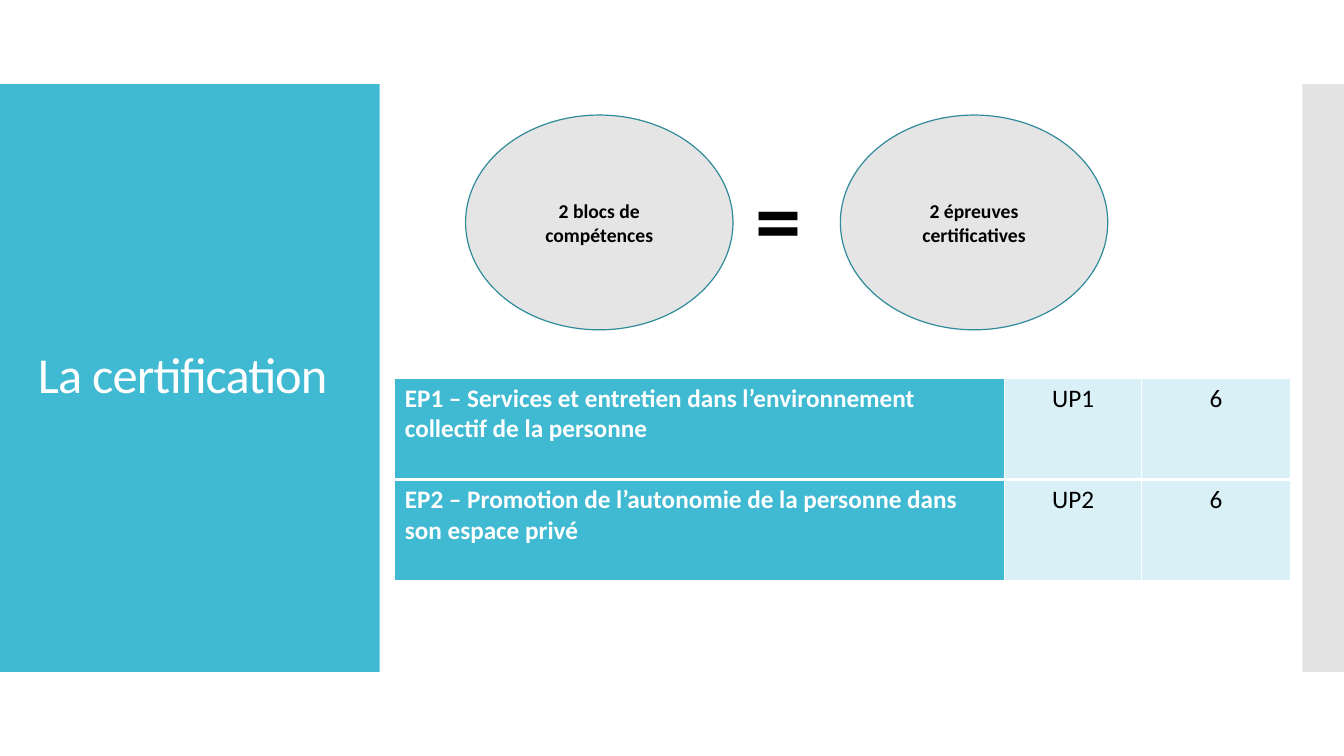
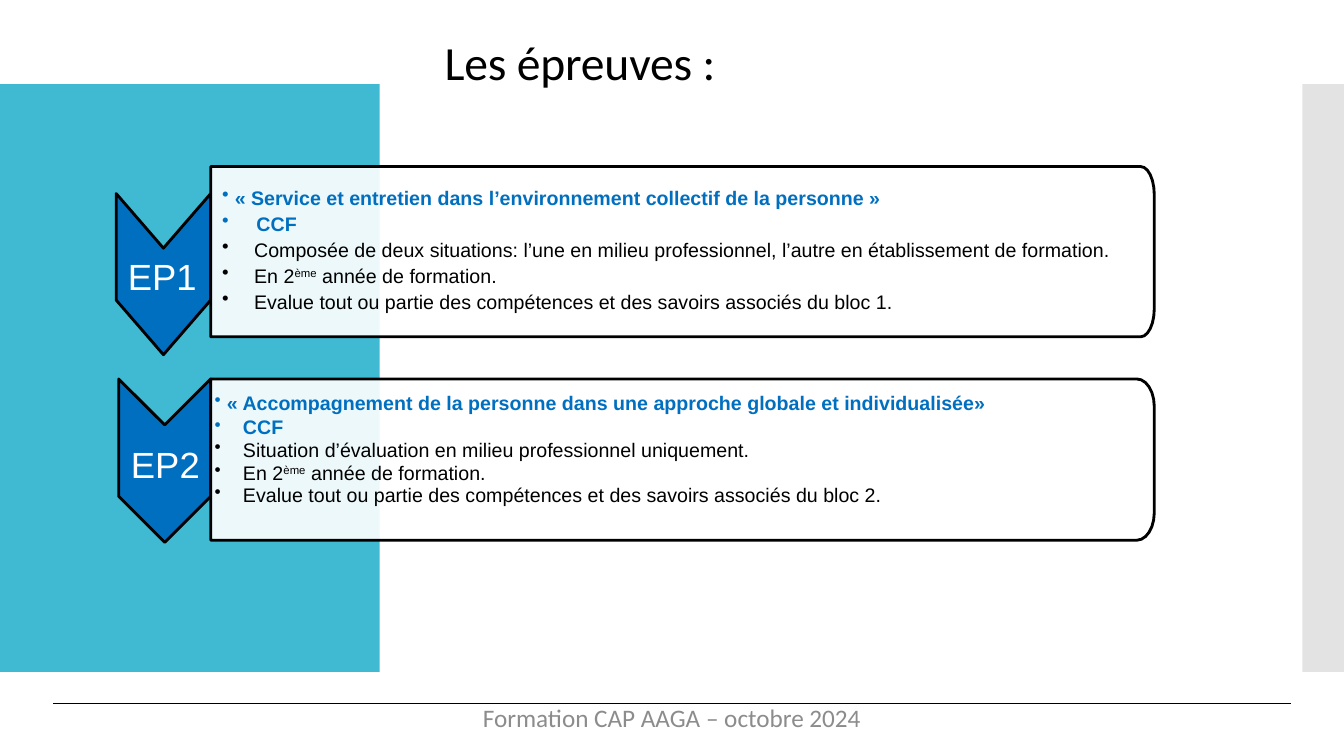
import math

from lxml import etree
from pptx import Presentation
from pptx import util as u
from pptx.dml.color import RGBColor
from pptx.enum import shapes, text
from pptx.oxml.ns import qn

Pt = u.Pt
PAGE_WIDTH, PAGE_HEIGHT = 960, 540
TEAL, PALE_TEAL, DARK_TEAL = "40BAD2", "D9F1F6", "2F8A9B"
BLUE, GREY, SIDE_GREY, FOOTER_GREY = "006FC0", "E5E5E5", "C8C8C8", "8C8C8C"
WHITE, BLACK = "FFFFFF", "000000"
HEADING_FONT, BODY_FONT = "Calibri", "Arial"
BAND_TOP, BAND_HEIGHT = 60, 420
PANEL_LEFT, PANEL_WIDTH = 150.5, 674
LEFT, CENTER = text.PP_ALIGN.LEFT, text.PP_ALIGN.CENTER
TOP, MIDDLE = text.MSO_ANCHOR.TOP, text.MSO_ANCHOR.MIDDLE


def color(value):
    return RGBColor.from_string(value)


# Text
def add_span(para, words, size, ink, font=HEADING_FONT, bold=False,
             spacing=0, raised=False):
    span = para.add_run()
    span.text = words
    span.font.size = Pt(size)
    span.font.name = font
    span.font.bold = bold
    span.font.color.rgb = color(ink)
    properties = span.font._element
    if spacing:
        properties.set("spc", str(round(spacing * 100)))
    if raised:
        properties.set("baseline", "30000")


def add_box(page, left, top, width, height, anchor=TOP, inset=0):
    box = page.shapes.add_textbox(Pt(left), Pt(top), Pt(width), Pt(height))
    frame = box.text_frame
    frame.word_wrap = True
    frame.vertical_anchor = anchor
    frame.margin_left = frame.margin_right = Pt(inset)
    frame.margin_top = frame.margin_bottom = Pt(inset / 2)
    return frame


def add_label(page, place, words, size, ink, align=LEFT, anchor=TOP, inset=0,
              line_spacing=None, **style):
    para = add_box(page, *place, anchor=anchor, inset=inset).paragraphs[0]
    para.alignment = align
    para.line_spacing = line_spacing
    add_span(para, words, size, ink, **style)


def set_bullet(para, indent, hanging, bullet_size):
    properties = para._p.get_or_add_pPr()
    properties.set("marL", str(Pt(indent)))
    properties.set("indent", str(-Pt(hanging)))
    etree.SubElement(properties, qn("a:buSzPct")).set("val", str(bullet_size * 1000))
    etree.SubElement(properties, qn("a:buChar")).set("char", "•")


def add_bullets(page, place, items, bullet_left, bullet_size):
    """Each item: indent, space before, line spacing, ink, bold, spans."""
    frame = add_box(page, *place)
    for index, (indent, before, spacing, ink, bold, spans) in enumerate(items):
        para = frame.add_paragraph() if index else frame.paragraphs[0]
        para.space_before = Pt(before)
        para.line_spacing = Pt(spacing) if spacing else None
        set_bullet(para, indent, indent - bullet_left, bullet_size)
        for words in spans:
            add_span(para, words, 14, ink, BODY_FONT, bold, raised=words == "ème")


# Shapes
def style_shape(shape, fill, line=None, weight=1, opacity=100):
    shape.shadow.inherit = False
    shape.fill.solid()
    shape.fill.fore_color.rgb = color(fill)
    if opacity < 100:
        tint = shape._element.spPr.find(qn("a:solidFill")).find(qn("a:srgbClr"))
        etree.SubElement(tint, qn("a:alpha")).set("val", str(opacity * 1000))
    if line:
        shape.line.color.rgb = color(line)
        shape.line.width = Pt(weight)
    else:
        shape.line.fill.background()


def add_preset(page, kind, left, top, width, height, fill, **style):
    shape = page.shapes.add_shape(kind, Pt(left), Pt(top), Pt(width), Pt(height))
    style_shape(shape, fill, **style)
    return shape


def add_outline(page, points, fill, opacity=100):
    points = [(Pt(x), Pt(y)) for x, y in points]
    builder = page.shapes.build_freeform(*points[0])
    builder.add_line_segments(points[1:], close=True)
    style_shape(builder.convert_to_shape(), fill, BLACK, 2.04, opacity)


def add_chevron(page, left, top, right, bottom, depth):
    middle = (left + right) / 2
    add_outline(page, [(left, top), (middle, top + depth), (right, top),
                       (right, bottom - depth), (middle, bottom),
                       (left, bottom - depth)], BLUE)


def add_panel(page, top, height, corner_width, corner_height):
    """White panel with elliptical corners on its right side."""
    right, bottom = PANEL_LEFT + PANEL_WIDTH, top + height
    angles = [math.radians(15 * step) for step in range(7)]
    arc = [(right - corner_width * (1 - math.sin(angle)),
            corner_height * (1 - math.cos(angle))) for angle in angles]
    upper = [(x, top + drop) for x, drop in arc]
    lower = [(x, bottom - drop) for x, drop in reversed(arc)]
    add_outline(page, [(PANEL_LEFT, top), *upper, *lower, (PANEL_LEFT, bottom)],
                WHITE, opacity=90)


def add_rule(page, start, end, y):
    rule = page.shapes.add_connector(shapes.MSO_CONNECTOR.STRAIGHT,
                                     Pt(start), Pt(y), Pt(end), Pt(y))
    rule.line.color.rgb = color(BLACK)
    rule.line.width = Pt(0.84)
    etree.SubElement(rule._element.spPr, qn("a:effectLst"))


# Table
def set_borders(cell, **weights):
    properties = cell._tc.get_or_add_tcPr()
    for side in "LRTB":
        border = etree.SubElement(properties, qn("a:ln" + side))
        border.set("w", str(Pt(weights.get(side, 1))))
        fill = etree.SubElement(border, qn("a:solidFill"))
        etree.SubElement(fill, qn("a:srgbClr")).set("val", WHITE)


def add_exam_table(page, left, top, widths, row_height, rows):
    frame = page.shapes.add_table(len(rows), len(widths), Pt(left), Pt(top),
                                  Pt(sum(widths)), Pt(row_height * len(rows)))
    table = frame.table
    table.first_row = table.horz_banding = False
    for column, width in zip(table.columns, widths):
        column.width = Pt(width)
    for row, values in enumerate(rows):
        for column, words in enumerate(values):
            cell, heading = table.cell(row, column), column == 0
            set_borders(cell, **({"T": 3} if row else {"B": 3}))
            cell.fill.solid()
            cell.fill.fore_color.rgb = color(TEAL if heading else PALE_TEAL)
            para = cell.text_frame.paragraphs[0]
            para.alignment = LEFT if heading else CENTER
            add_span(para, words, 18, WHITE if heading else BLACK, bold=heading)


# Shared background
def add_page(deck):
    page = deck.slides.add_slide(deck.slide_layouts[6])
    rectangle = shapes.MSO_SHAPE.RECTANGLE
    add_preset(page, rectangle, 0, BAND_TOP, 271.2, BAND_HEIGHT, TEAL)
    add_preset(page, rectangle, 930.2, BAND_TOP, PAGE_WIDTH - 930.2, BAND_HEIGHT,
               SIDE_GREY, opacity=50)
    return page


# Slides
def build_certification(deck):
    page = add_page(deck)
    add_label(page, (20, 88.5, 232, 362), "La certification", 36, WHITE,
              anchor=MIDDLE, inset=7.2, line_spacing=0.9, spacing=-0.6)
    add_exam_table(page, 282, 270, (435.6, 98, 106), 72.5, [
        ("EP1 – Services et entretien dans l’environnement collectif de la personne",
         "UP1", "6"),
        ("EP2 – Promotion de l’autonomie de la personne dans son espace privé",
         "UP2", "6"),
    ])
    for left, words in ((332.6, "2 blocs de compétences"),
                        (600.3, "2 épreuves certificatives")):
        oval = add_preset(page, shapes.MSO_SHAPE.OVAL, left, 82.2, 191, 153.4,
                          GREY, line=DARK_TEAL, weight=0.85)
        frame = oval.text_frame
        frame.word_wrap = True
        frame.vertical_anchor = MIDDLE
        frame.paragraphs[0].alignment = CENTER
        add_span(frame.paragraphs[0], words, 14, BLACK, bold=True)
    add_label(page, (532.8, 111.3, 72, 87), "=", 66, BLACK, inset=7.2, bold=True)


def build_exams(deck):
    page = add_page(deck)
    add_rule(page, 38.2, 922.3, 502.6)
    add_label(page, (317.5, 22.5, 398, 42.5), "Les épreuves :", 34, BLACK,
              anchor=MIDDLE, spacing=-0.1)

    # First exam
    add_chevron(page, 83, 138.3, PANEL_LEFT, 253.4, 39)
    add_label(page, (91.3, 181.5, 56, 32), "EP1", 26, WHITE, font=BODY_FONT)
    add_panel(page, 119, 121.6, 9.7, 20)
    heading, detail = (1.75, None, BLUE, True), (1.75, None, BLACK, False)
    add_bullets(page, (157.7, 132.5, 675, 100), [
        (10, *heading, ["« Service et entretien dans l’environnement collectif "
                        "de la personne »"]),
        (25.5, *heading, ["CCF"]),
        (23.8, *detail, ["Composée de deux situations: l’une en milieu professionnel, "
                         "l’autre en établissement de formation."]),
        (23.8, *detail, ["En 2", "ème", " année de formation."]),
        (23.8, *detail, ["Evalue tout ou partie des compétences et des savoirs "
                         "associés du bloc 1."]),
    ], bullet_left=1, bullet_size=100)

    # Second exam
    add_chevron(page, 84.8, 270.7, PANEL_LEFT, 387.4, 32.8)
    add_panel(page, 270.7, 115.2, 12.5, 19.5)
    heading, detail = (1.1, 16.5, BLUE, True), (0, 16.1, BLACK, False)
    add_bullets(page, (152.6, 279.4, 657, 100), [
        (9.5, *heading, ["« Accompagnement de la personne dans une approche globale "
                         "et individualisée»"]),
        (21, *heading, ["CCF"]),
        (21, *detail, ["Situation d’évaluation en milieu professionnel uniquement."]),
        (21, *detail, ["En 2", "ème", " année de formation."]),
        (21, *detail, ["Evalue tout ou partie des compétences et des savoirs "
                       "associés du bloc 2."]),
    ], bullet_left=0.7, bullet_size=93)
    add_label(page, (93.6, 315.5, 56, 32), "EP2", 26, WHITE, font=BODY_FONT)

    add_label(page, (326.2, 501.8, 307.4, 22), "Formation CAP AAGA – octobre 2024",
              18, FOOTER_GREY, align=CENTER, anchor=MIDDLE)


def main():
    deck = Presentation()
    deck.slide_width, deck.slide_height = Pt(PAGE_WIDTH), Pt(PAGE_HEIGHT)
    build_certification(deck)
    build_exams(deck)
    deck.save("out.pptx")


if __name__ == "__main__":
    main()
